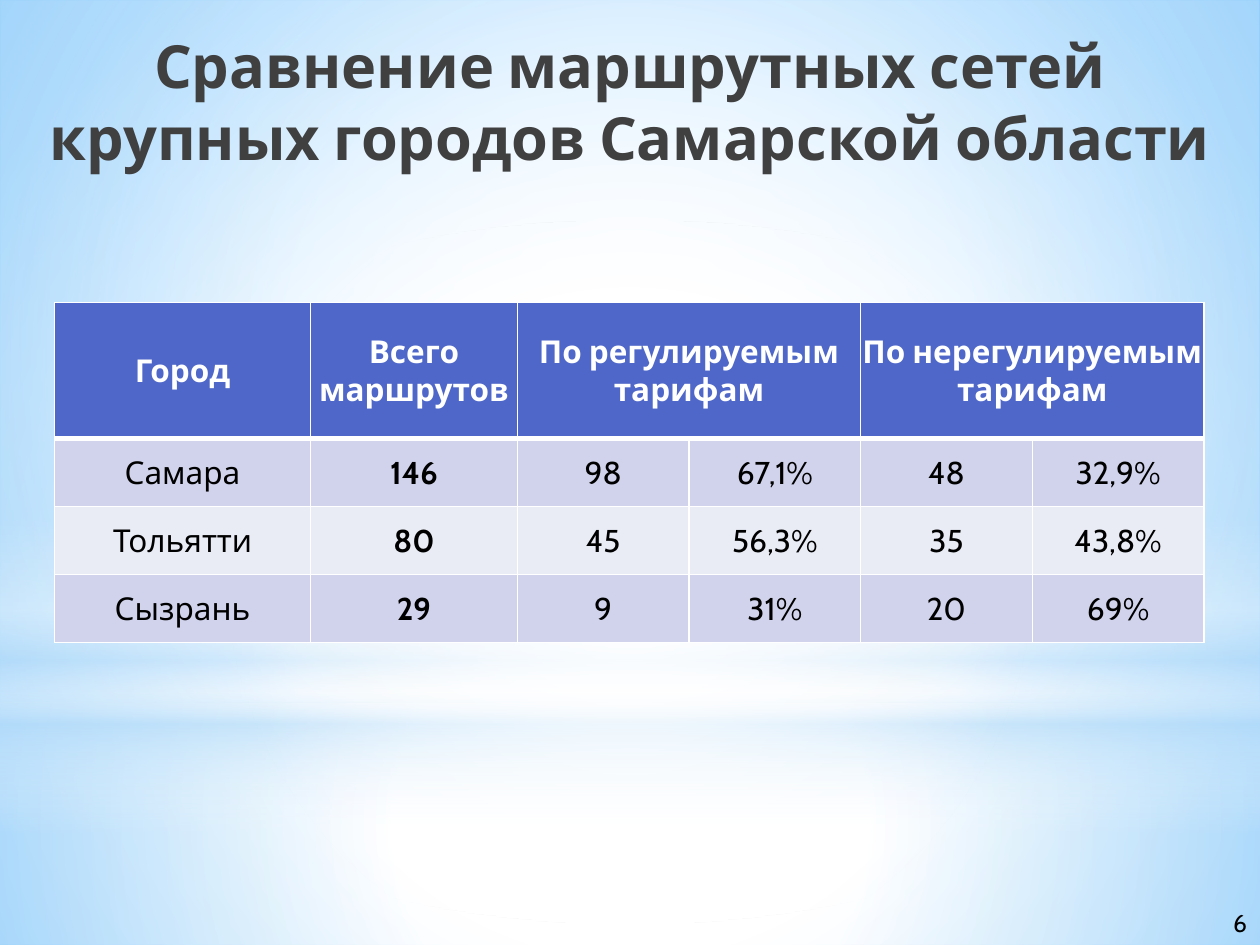
from dataclasses import dataclass
from typing import NamedTuple

from lxml import etree
from pptx import Presentation
from pptx.dml.color import RGBColor
from pptx.enum.shapes import MSO_SHAPE
from pptx.enum.text import MSO_ANCHOR, PP_ALIGN
from pptx.oxml.ns import qn
from pptx.util import Cm, Pt

RECTANGLE = MSO_SHAPE.RECTANGLE
OVAL = MSO_SHAPE.OVAL
MIDDLE = MSO_ANCHOR.MIDDLE
TOP = MSO_ANCHOR.TOP
CENTER = PP_ALIGN.CENTER
LEFT = PP_ALIGN.LEFT


@dataclass(frozen=True)
class Theme:
    font: str = "Cabin"
    title_size: int = 34
    table_size: int = 18
    number_size: int = 14
    title: str = "404040"
    text: str = "000000"
    white: str = "FFFFFF"
    sky: str = "B4DCFA"
    edge: str = "63BCFF"
    header: str = "4E67C8"
    bands: tuple[str, str] = ("D0D3EB", "E9EBF5")


THEME = Theme()


class Box(NamedTuple):
    left: float
    top: float
    width: float
    height: float


class Stop(NamedTuple):
    position: int
    color: str
    opacity: int = 100


class Gradient(NamedTuple):
    stops: list[Stop]
    focus: tuple[int, int, int, int] | None = (50, 50, 50, 50)


class Glow(NamedTuple):
    preset: int
    box: Box
    gradient: Gradient


class City(NamedTuple):
    name: str
    total: str
    regulated: str
    regulated_share: str
    unregulated: str
    unregulated_share: str


BACKGROUND = Gradient(
    [Stop(0, THEME.white), Stop(42, THEME.white), Stop(100, THEME.edge)], (24, 44, 24, 12)
)
GLOWS = [
    Glow(RECTANGLE, Box(0, 14.17, 25.4, 4.88), Gradient(
        [Stop(0, THEME.white, 91), Stop(37, THEME.white, 76), Stop(100, THEME.sky, 79)])),
    Glow(RECTANGLE, Box(0, 0, 25.4, 14.17), Gradient(
        [Stop(0, THEME.white, 89), Stop(48, THEME.white, 62), Stop(100, THEME.sky, 79)])),
    Glow(RECTANGLE, Box(0, 10.46, 25.4, 6.35), Gradient(
        [Stop(0, THEME.white, 0), Stop(29, THEME.white, 30), Stop(45, THEME.sky, 40),
         Stop(55, THEME.white, 26), Stop(65, THEME.sky, 60), Stop(100, THEME.white, 0)], None)),
    Glow(OVAL, Box(0, 4.45, 25.4, 14.17), Gradient(
        [Stop(0, THEME.white), Stop(56, THEME.white, 0)])),
]
HEADINGS = {0: "Город", 1: "Всего маршрутов", 2: "По регулируемым тарифам",
            4: "По нерегулируемым тарифам"}
CITIES = [
    City("Самара", "146", "98", "67,1%", "48", "32,9%"),
    City("Тольятти", "80", "45", "56,3%", "35", "43,8%"),
    City("Сызрань", "29", "9", "31%", "20", "69%"),
]
COLUMN_WIDTHS = [5.16, 4.17] + [3.46] * 4
ROW_HEIGHTS = [2.74] + [1.37] * len(CITIES)
TABLE_BOX = Box(1.1, 6.1, sum(COLUMN_WIDTHS), sum(ROW_HEIGHTS))


def lengths(box: Box) -> list[Cm]:
    return [Cm(value) for value in box]


def add_color(parent, color: str, opacity: int = 100) -> None:
    element = etree.SubElement(parent, qn("a:srgbClr"), val=color)
    if opacity < 100:
        etree.SubElement(element, qn("a:alpha"), val=str(opacity * 1000))


def set_gradient(properties, gradient: Gradient) -> None:
    placeholder = properties.find(qn("a:solidFill"))
    fill = etree.Element(qn("a:gradFill"), rotWithShape="1")
    stops = etree.SubElement(fill, qn("a:gsLst"))
    for stop in gradient.stops:
        element = etree.SubElement(stops, qn("a:gs"), pos=str(stop.position * 1000))
        add_color(element, stop.color, stop.opacity)
    if gradient.focus is None:
        etree.SubElement(fill, qn("a:lin"), ang="5400000", scaled="0")
    else:
        circle = etree.SubElement(fill, qn("a:path"), path="circle")
        sides = {side: str(value * 1000) for side, value in zip("ltrb", gradient.focus)}
        etree.SubElement(circle, qn("a:fillToRect"), sides)
    properties.replace(placeholder, fill)


def set_background(slide) -> None:
    slide.background.fill.solid()
    set_gradient(next(slide.element.iter(qn("p:bgPr"))), BACKGROUND)


def add_glow(slide, glow: Glow) -> None:
    shape = slide.shapes.add_shape(glow.preset, *lengths(glow.box))
    shape.shadow.inherit = False
    shape.line.fill.background()
    shape.fill.solid()
    set_gradient(shape.element.spPr, glow.gradient)


def format_text(text_frame, size: int, color: str, bold: bool, alignment) -> None:
    for paragraph in text_frame.paragraphs:
        paragraph.alignment = alignment
        for run in paragraph.runs:
            run.font.name = THEME.font
            run.font.size = Pt(size)
            run.font.bold = bold
            run.font.color.rgb = RGBColor.from_string(color)


def add_text(slide, box: Box, text: str, size: int, color: str, bold: bool = False,
             alignment=LEFT, anchor=TOP, wrap: bool = False) -> None:
    text_frame = slide.shapes.add_textbox(*lengths(box)).text_frame
    text_frame.word_wrap = wrap
    text_frame.vertical_anchor = anchor
    text_frame.text = text
    format_text(text_frame, size, color, bold, alignment)


def set_borders(cell, bottom: int) -> None:
    properties = cell._tc.get_or_add_tcPr()
    widths = {"a:lnL": 1, "a:lnR": 1, "a:lnT": 1, "a:lnB": bottom}
    for index, (tag, width) in enumerate(widths.items()):
        line = etree.Element(qn(tag), w=str(Pt(width)))
        add_color(etree.SubElement(line, qn("a:solidFill")), THEME.white)
        properties.insert(index, line)


def fill_cell(cell, text: str, fill: str, color: str, bold: bool, bottom: int = 1) -> None:
    cell.text_frame.text = text
    cell.vertical_anchor = MIDDLE
    cell.margin_left = cell.margin_right = cell.margin_top = Cm(0.03)
    cell.margin_bottom = 0
    cell.fill.solid()
    cell.fill.fore_color.rgb = RGBColor.from_string(fill)
    set_borders(cell, bottom)
    format_text(cell.text_frame, THEME.table_size, color, bold, CENTER)


def add_route_table(slide) -> None:
    table = slide.shapes.add_table(
        len(ROW_HEIGHTS), len(COLUMN_WIDTHS), *lengths(TABLE_BOX)).table
    for column, width in zip(table.columns, COLUMN_WIDTHS):
        column.width = Cm(width)
    for row, height in zip(table.rows, ROW_HEIGHTS):
        row.height = Cm(height)
    for index in range(len(COLUMN_WIDTHS)):
        fill_cell(table.cell(0, index), HEADINGS.get(index, ""), THEME.header,
                  THEME.white, True, bottom=3)
    for first in (2, 4):
        table.cell(0, first).merge(table.cell(0, first + 1))
    for row_index, city in enumerate(CITIES, start=1):
        band = THEME.bands[(row_index - 1) % 2]
        for index, text in enumerate(city):
            fill_cell(table.cell(row_index, index), text, band, THEME.text, index == 1)


def main() -> None:
    presentation = Presentation()
    presentation.slide_width, presentation.slide_height = Cm(25.4), Cm(19.05)
    slide = presentation.slides.add_slide(presentation.slide_layouts[6])
    set_background(slide)
    for glow in GLOWS:
        add_glow(slide, glow)
    add_text(slide, Box(0, 0.53, 25.4, 3),
             "Сравнение маршрутных сетей крупных городов Самарской области",
             THEME.title_size, THEME.title, True, CENTER, MIDDLE, True)
    add_route_table(slide)
    add_text(slide, Box(24.61, 18.19, 0.79, 0.86), "6", THEME.number_size, THEME.text)
    presentation.save("out.pptx")


if __name__ == "__main__":
    main()
